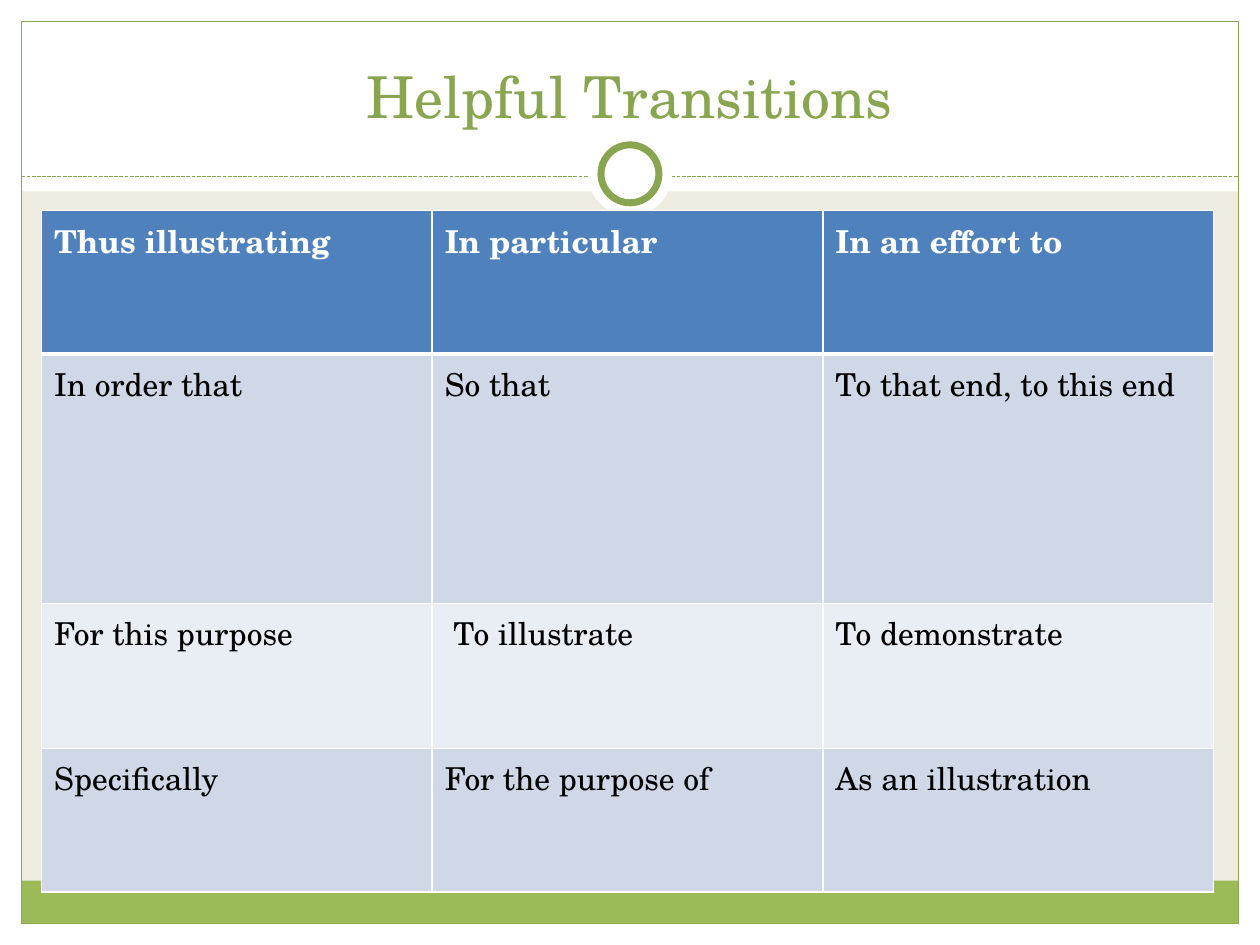
import pptx
import pptx.dml.color
import pptx.enum.dml
import pptx.enum.shapes
import pptx.enum.text
import pptx.oxml
import pptx.oxml.ns
import pptx.util

FONT = "TeX Gyre Schola"
GREEN, LIME, WHITE, BEIGE = "89A54F", "9BBB59", "FFFFFF", "EEECE1"
MARGIN = 0.17
SHAPE = pptx.enum.shapes.MSO_SHAPE
inch = pptx.util.Inches
rgb = pptx.dml.color.RGBColor.from_string


def add_panel(kind, box, fill=None, line_width=None):
    sp = s.shapes.add_shape(kind, *map(inch, box))
    sp.shadow.inherit = False
    if fill:
        sp.fill.solid()
        sp.fill.fore_color.rgb = rgb(fill)
    else:
        sp.fill.background()
    if line_width:
        sp.line.color.rgb = rgb(GREEN)
        sp.line.width = pptx.util.Pt(line_width)
    else:
        sp.line.fill.background()


def add_border(cell, side, width):
    """Draw a white border on one side (L, R, T or B) of a cell."""
    ln = pptx.oxml.parse_xml(
        f'<a:ln{side} xmlns:a="http://schemas.openxmlformats.org/drawingml/2006/main" '
        f'w="{pptx.util.Pt(width)}"><a:solidFill><a:srgbClr val="{WHITE}"/>'
        f'</a:solidFill></a:ln{side}>')
    tc_pr = cell._tc.get_or_add_tcPr()
    tc_pr.insert("LRTB".index(side), ln)


prs = pptx.Presentation()
W, H = 10, 7.5
prs.slide_width, prs.slide_height = inch(W), inch(H)
s = prs.slides.add_slide(prs.slide_layouts[6])
s.background.fill.solid()
s.background.fill.fore_color.rgb = rgb(BEIGE)

# White margins, header band, green footer and frame
for box in [
    (0, H - MARGIN, W, MARGIN),
    (0, 0, W, 1.52),
    (0, 0, MARGIN, H),
    (W - MARGIN, 0, MARGIN, H),
]:
    add_panel(SHAPE.RECTANGLE, box, WHITE)
add_panel(SHAPE.RECTANGLE, (MARGIN, 6.99, W - 2 * MARGIN, 0.34), LIME)
add_panel(SHAPE.RECTANGLE, (MARGIN, MARGIN, W - 2 * MARGIN, H - 2 * MARGIN), line_width=0.75)

# Dashed divider with a ring at its centre
divider = s.shapes.add_connector(
    pptx.enum.shapes.MSO_CONNECTOR.STRAIGHT,
    inch(MARGIN), inch(1.4), inch(W - MARGIN), inch(1.4))
divider.line.color.rgb = rgb(GREEN)
divider.line.width = pptx.util.Pt(0.75)
divider.line.dash_style = pptx.enum.dml.MSO_LINE.SQUARE_DOT
divider._element.spPr.append(pptx.oxml.parse_xml(
    '<a:effectLst xmlns:a="http://schemas.openxmlformats.org/drawingml/2006/main"/>'))
for size, line_width in [(0.67, None), (0.46, 4)]:
    add_panel(SHAPE.OVAL, (W / 2 - size / 2, 1.38 - size / 2, size, size), WHITE, line_width)

# Title
tf = s.shapes.add_textbox(inch(0.33), inch(0.25), inch(9.33), inch(0.83)).text_frame
tf.word_wrap = True
tf.vertical_anchor = pptx.enum.text.MSO_ANCHOR.BOTTOM
p = tf.paragraphs[0]
p.text = "Helpful Transitions"
p.alignment = pptx.enum.text.PP_ALIGN.CENTER
p.font.name, p.font.size = FONT, pptx.util.Pt(33)
p.font.color.rgb = rgb(GREEN)

# Table of transitions: row height, fill, phrases
rows = [
    (1.14, "4F81BD", ["Thus illustrating", "In particular", "In an effort to"]),
    (1.98, "D0D8E8", ["In order that", "So that", "To that end, to this end"]),
    (1.15, "E9EDF4", ["For this purpose", " To illustrate", "To demonstrate"]),
    (1.14, "D0D8E8", ["Specifically", "For the purpose of", "As an illustration"]),
]
table = s.shapes.add_table(
    len(rows), 3, inch(0.33), inch(1.67), inch(9.3), inch(5.41)).table
for column in table.columns:
    column.width = inch(3.1)
for i, (height, fill, phrases) in enumerate(rows):
    table.rows[i].height = inch(height)
    for j, phrase in enumerate(phrases):
        cell = table.cell(i, j)
        cell.fill.solid()
        cell.fill.fore_color.rgb = rgb(fill)
        for side in "LRTB":
            heavy = (i, side) in [(0, "B"), (1, "T")]
            add_border(cell, side, 3 if heavy else 1)
        p = cell.text_frame.paragraphs[0]
        p.text = phrase
        p.font.name, p.font.size = FONT, pptx.util.Pt(18)
        p.font.bold = i == 0
        p.font.color.rgb = rgb(WHITE if i == 0 else "000000")

prs.save("out.pptx")
